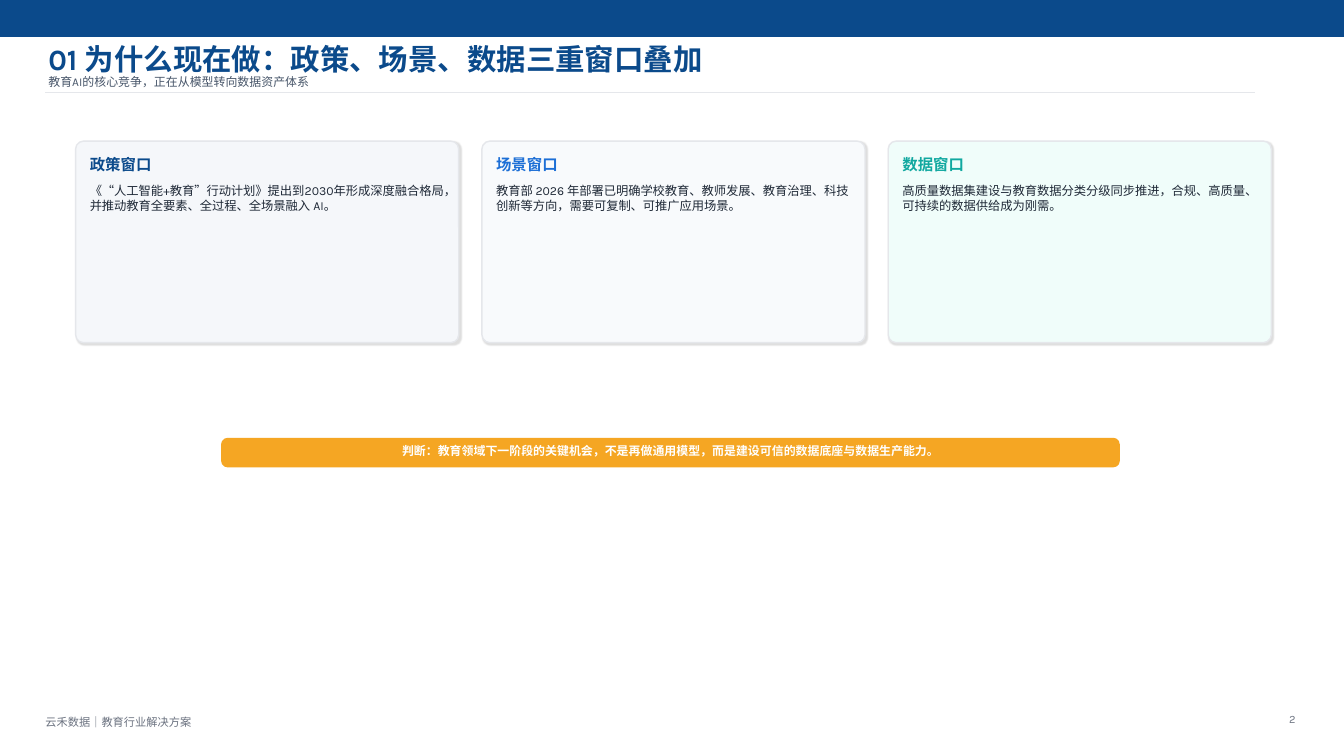
from dataclasses import dataclass

from pptx import Presentation
from pptx.dml.color import RGBColor
from pptx.enum.shapes import MSO_CONNECTOR, MSO_SHAPE
from pptx.enum.text import MSO_ANCHOR, MSO_AUTO_SIZE, PP_ALIGN
from pptx.oxml.ns import qn
from pptx.oxml.xmlchemy import OxmlElement
from pptx.util import Inches, Pt

# Content
TITLE = "01 为什么现在做：政策、场景、数据三重窗口叠加"
SUBTITLE = "教育AI的核心竞争，正在从模型转向数据资产体系"
WINDOWS = [  # heading, body, heading colour, card fill
    ("政策窗口",
     "《“人工智能+教育”行动计划》提出到2030年形成深度融合格局，并推动教育全要素、全过程、全场景融入 AI。",
     "0B4A8B", "F5F7FA"),
    ("场景窗口",
     "教育部 2026 年部署已明确学校教育、教师发展、教育治理、科技创新等方向，需要可复制、可推广应用场景。",
     "1D6FD6", "F8FAFC"),
    ("数据窗口",
     "高质量数据集建设与教育数据分类分级同步推进，合规、高质量、可持续的数据供给成为刚需。",
     "11A8A0", "F0FDFA"),
]
JUDGEMENT = "判断：教育领域下一阶段的关键机会，不是再做通用模型，而是建设可信的数据底座与数据生产能力。"
FOOTER = "云禾数据｜教育行业解决方案"
PAGE = "2"


@dataclass(frozen=True)
class Theme:
    font: str = "Karla"
    navy: str = "0B4A8B"
    amber: str = "F5A623"
    rule: str = "E5E7EB"
    white: str = "FFFFFF"
    body: str = "1F2937"
    subtitle: str = "475569"
    muted: str = "6B7280"
    title_size: float = 21
    heading_size: float = 11
    body_size: float = 8.8
    note_size: float = 8.5
    footer_size: float = 8


THEME = Theme()

# Grid, in inches
SLIDE_W, SLIDE_H = 13.33, 7.5
CARD_LEFT, CARD_TOP, CARD_W, CARD_H = 0.75, 1.4, 3.8, 2
CARD_GAP = 0.23
CARD_PAD = 0.14

prs = Presentation()
prs.slide_width, prs.slide_height = Inches(SLIDE_W), Inches(SLIDE_H)
slide = prs.slides.add_slide(prs.slide_layouts[5])
shapes = slide.shapes


def rgb(value):
    return RGBColor.from_string(value)


def write(holder, text, size, color, bold=False, align=PP_ALIGN.LEFT,
          anchor=MSO_ANCHOR.MIDDLE):
    frame = holder.text_frame
    frame.word_wrap = True
    frame.auto_size = MSO_AUTO_SIZE.NONE
    frame.vertical_anchor = anchor
    frame.margin_left = frame.margin_right = 0
    frame.margin_top = frame.margin_bottom = 0
    paragraph = frame.paragraphs[0]
    paragraph.text = text
    paragraph.alignment = align
    font = paragraph.font
    font.name, font.size, font.bold = THEME.font, Pt(size), bold
    font.color.rgb = rgb(color)


def label(box, *args, **kwargs):
    write(shapes.add_textbox(*map(Inches, box)), *args, **kwargs)


def panel(kind, box, fill, line, corner=None):
    shape = shapes.add_shape(kind, *map(Inches, box))
    shape.shadow.inherit = False
    shape.fill.solid()
    shape.fill.fore_color.rgb = rgb(fill)
    shape.line.color.rgb = rgb(line)
    shape.line.width = Pt(1)
    if corner is not None:
        shape.adjustments[0] = corner
    return shape


def cast_shadow(shape):
    shadow = OxmlElement("a:outerShdw")
    for key, value in (("blurRad", Pt(1.2)), ("dist", Pt(1.2)),
                       ("dir", 45 * 60000), ("algn", "bl"), ("rotWithShape", 0)):
        shadow.set(key, str(value))
    color = OxmlElement("a:srgbClr")
    color.set("val", "000000")
    alpha = OxmlElement("a:alpha")
    alpha.set("val", "12000")
    color.append(alpha)
    shadow.append(color)
    shape.element.spPr.find(qn("a:effectLst")).append(shadow)


# Header: band, rule, title and subtitle
panel(MSO_SHAPE.RECTANGLE, (0, 0, SLIDE_W, 0.36), THEME.navy, THEME.navy)
header_rule = shapes.add_connector(
    MSO_CONNECTOR.STRAIGHT, *map(Inches, (0.45, 0.92, 12.45, 0.92)))
header_rule.line.color.rgb = rgb(THEME.rule)
header_rule.line.width = Pt(1)
header_rule.element.spPr.append(OxmlElement("a:effectLst"))

title = shapes.title
title.left, title.top, title.width, title.height = map(Inches, (0.48, 0.42, 9.8, 0.32))
write(title, TITLE, THEME.title_size, THEME.navy, bold=True)
label((0.48, 0.72, 8.5, 0.18), SUBTITLE, THEME.note_size, THEME.subtitle)

# Three window cards
text_w = CARD_W - 2 * CARD_PAD
for column, (heading, body, accent, fill) in enumerate(WINDOWS):
    left = CARD_LEFT + column * (CARD_W + CARD_GAP)
    text_left = left + CARD_PAD
    card = panel(MSO_SHAPE.ROUNDED_RECTANGLE, (left, CARD_TOP, CARD_W, CARD_H),
                 fill, THEME.rule, corner=0.04)
    cast_shadow(card)
    label((text_left, CARD_TOP + 0.12, text_w, 0.22), heading,
          THEME.heading_size, accent, bold=True)
    label((text_left, CARD_TOP + 0.42, text_w, 1.48), body,
          THEME.body_size, THEME.body, anchor=MSO_ANCHOR.TOP)

# Judgement banner
panel(MSO_SHAPE.ROUNDED_RECTANGLE, (2.2, 4.35, 8.9, 0.28),
      THEME.amber, THEME.amber, corner=0.21)
label((2.26, 4.39, 8.78, 0.16), JUDGEMENT, THEME.note_size, THEME.white,
      bold=True, align=PP_ALIGN.CENTER)

# Footer
label((0.45, 7.08, 3.8, 0.16), FOOTER, THEME.footer_size, THEME.muted)
label((12.55, 7.05, 0.3, 0.16), PAGE, THEME.footer_size, THEME.muted,
      align=PP_ALIGN.RIGHT)

prs.save("out.pptx")
